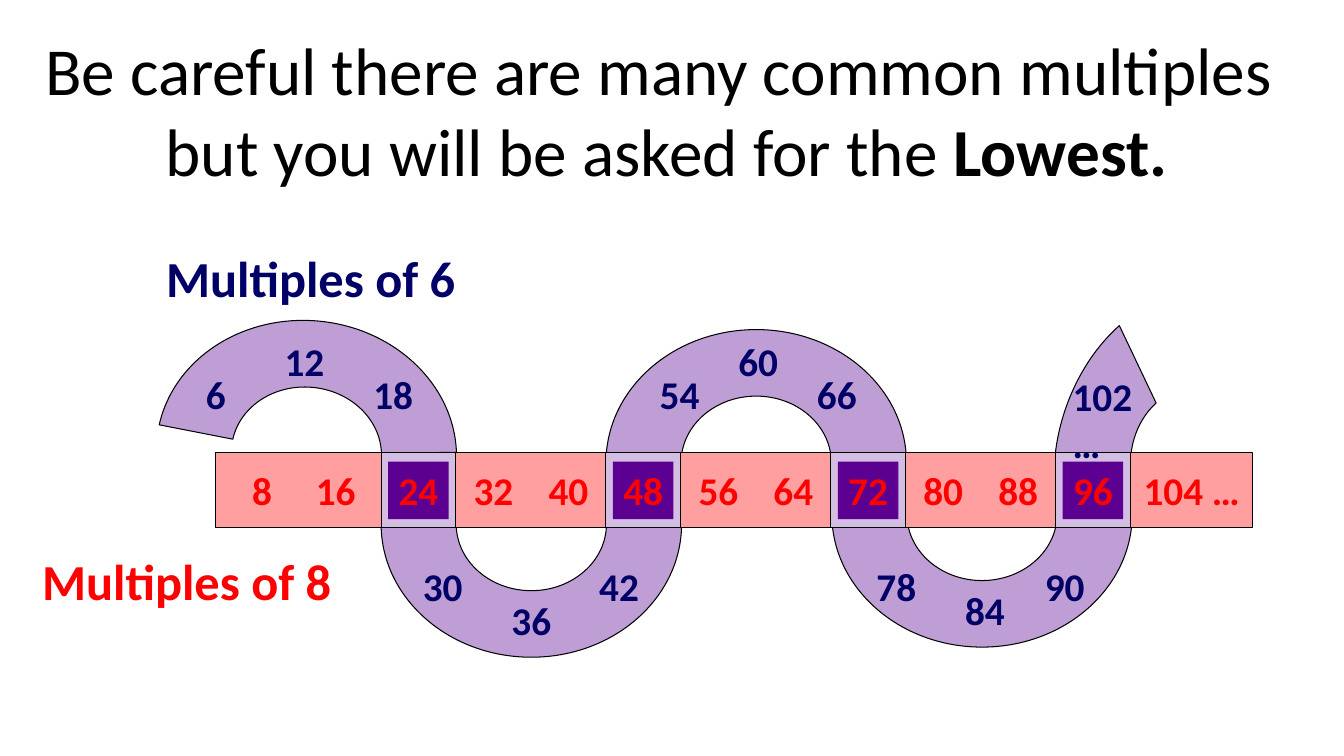
import math

import lxml.etree
import pptx
import pptx.dml.color
import pptx.enum.shapes
import pptx.enum.text
import pptx.oxml.ns
import pptx.util

Inches, Pt = pptx.util.Inches, pptx.util.Pt
qn = pptx.oxml.ns.qn
ALIGN = pptx.enum.text.PP_ALIGN
RECTANGLE = pptx.enum.shapes.MSO_SHAPE.RECTANGLE
NAVY, RED, BLACK = "010066", "FF0000", "000000"
PURPLE, PINK, LILAC, VIOLET = "BE9ED4", "FF9F9F", "D4BDE2", "5B0091"
CROSSING_STEP = 2.23                # three columns of the number bar
CELL = CROSSING_STEP / 3
BAR_TOP = 4.49
FIRST_CROSSING = 3.78               # left edge of the cell that holds 24
BAR_MIDDLE = BAR_TOP + CELL / 2


def paint(shape, fill, outline=None):
    shape.shadow.inherit = False
    shape.fill.solid()
    shape.fill.fore_color.rgb = pptx.dml.color.RGBColor.from_string(fill)
    if outline:
        shape.line.color.rgb = pptx.dml.color.RGBColor.from_string(outline)
        shape.line.width = Pt(0.75)
    else:
        shape.line.fill.background()


def write(box, text, size, color, bold=True, align=ALIGN.CENTER, wrap=False):
    """Add one run to the last paragraph of a box."""
    box.text_frame.word_wrap = wrap
    box.text_frame.vertical_anchor = pptx.enum.text.MSO_ANCHOR.TOP
    para = box.text_frame.paragraphs[-1]
    para.alignment = align
    span = para.add_run()
    span.text = text
    span.font.name, span.font.size, span.font.bold = "Calibri", Pt(size), bold
    span.font.color.rgb = pptx.dml.color.RGBColor.from_string(color)


deck = pptx.Presentation()
deck.slide_width, deck.slide_height = Inches(13.33), Inches(7.5)
page = deck.slides.add_slide(deck.slide_layouts[5])
shapes = page.shapes

# Title
title = shapes.title
title.left, title.top = Inches(0.19), Inches(0.23)
title.width, title.height = Inches(12.84), Inches(1.72)
write(title, "Be careful there are many common multiples ", 48, BLACK, False, wrap=True)
title.text_frame.add_paragraph()
write(title, "but you will be asked for the ", 48, BLACK, False, wrap=True)
write(title, "Lowest.", 48, BLACK, wrap=True)

# Snake of sixes: centre x, centre y, radii, hole ratio, start, end, rotation (degrees)
bends = [
    (11.7, 4.49, 1.62, 1.21, 0.39, -130, -50, 286.3),
    (3.04, 4.5, 1.49, 1.32, 0.5, -173.5, -6.5, 5.3),
    (5.27, 5.2, 1.49, 1.32, 0.5, 180, 0, 0),
    (7.5, 4.59, 1.49, 1.32, 0.5, -178, -2, 0),
    (9.74, 5.1, 1.49, 1.32, 0.5, 179, 1, 0),
]
for center_x, center_y, radius_x, radius_y, hole, start, end, rotation in bends:
    turn, first, last = (math.radians(degrees) for degrees in (rotation, start, end))
    outline = []
    for scale, begin, finish in [(1, first, last), (hole, last, first)]:
        half = (finish - begin) / 2
        reach = 4 / 3 * math.tan(half / 4)
        # Each edge is two curves: end points (reach 0) with control points between
        for angle, offset in [(begin, 0), (begin, reach), (begin + half, -reach),
                              (begin + half, 0), (begin + half, reach),
                              (finish, -reach), (finish, 0)]:
            x = scale * radius_x * (math.cos(angle) - offset * math.sin(angle))
            y = scale * radius_y * (math.sin(angle) + offset * math.cos(angle))
            outline.append((Inches(center_x + x * math.cos(turn) - y * math.sin(turn)),
                            Inches(center_y + x * math.sin(turn) + y * math.cos(turn))))
    builder = shapes.build_freeform(*outline[0])
    builder.add_line_segments(outline[1:], close=True)
    bend = builder.convert_to_shape()
    paint(bend, PURPLE, BLACK)
    segments = list(bend._element.iter(qn("a:lnTo")))
    for index in (0, 3, 7, 10):
        curve = lxml.etree.Element(qn("a:cubicBezTo"))
        segments[index].addprevious(curve)
        for segment in segments[index:index + 3]:
            curve.append(segment[0])
            segment.getparent().remove(segment)

# Bar of eights
bar = shapes.add_shape(RECTANGLE, Inches(2.14), Inches(BAR_TOP), Inches(10.28), Inches(CELL))
paint(bar, PINK, BLACK)

for left, top, text, color in [(1.55, 2.4, "Multiples of 6", NAVY),
                               (0.32, 5.41, "Multiples of 8", RED)]:
    heading = shapes.add_textbox(Inches(left), Inches(top), Inches(3.3), Inches(0.71))
    write(heading, text, 36, color, align=ALIGN.LEFT)

# Common multiples
for crossing in range(4):
    left = FIRST_CROSSING + CROSSING_STEP * crossing
    cell = shapes.add_shape(RECTANGLE, Inches(left), Inches(BAR_TOP), Inches(CELL), Inches(CELL))
    paint(cell, LILAC, BLACK)
    core = shapes.add_shape(RECTANGLE, Inches(left + 0.07), Inches(4.58), Inches(0.6), Inches(0.57))
    paint(core, VIOLET)
    write(core, str(24 * (crossing + 1)), 28, RED)

# Remaining numbers: centre x, centre y, text, colour
numbers = [(2.6, BAR_MIDDLE, "8", RED), (3.33, BAR_MIDDLE, "16", RED),
           (11.82, BAR_MIDDLE, "104 …", RED)]
for column in range(10):
    if column % 3:
        center = FIRST_CROSSING + CELL * (column + 0.5)
        numbers.append((center, BAR_MIDDLE, str(24 + 8 * column), RED))
sixes = [(2.14, 3.9, 6), (3.02, 3.58, 12), (3.9, 3.9, 18),
         (4.39, 5.81, 30), (5.27, 6.15, 36), (6.14, 5.81, 42),
         (6.74, 3.9, 54), (7.52, 3.58, 60), (8.3, 3.9, 66),
         (8.89, 5.81, 78), (9.77, 6.05, 84), (10.56, 5.81, 90)]
numbers += [(x, y, str(value), NAVY) for x, y, value in sixes]
for center_x, center_y, text, color in numbers:
    width = 1.2 if len(text) > 2 else 0.6
    box = shapes.add_textbox(Inches(center_x - width / 2), Inches(center_y - 0.28),
                             Inches(width), Inches(0.57))
    write(box, text, 28, color)

snake_end = shapes.add_textbox(Inches(10.54), Inches(3.64), Inches(1.02), Inches(1.04))
write(snake_end, "102…", 28, NAVY, align=ALIGN.LEFT, wrap=True)

deck.save("out.pptx")
